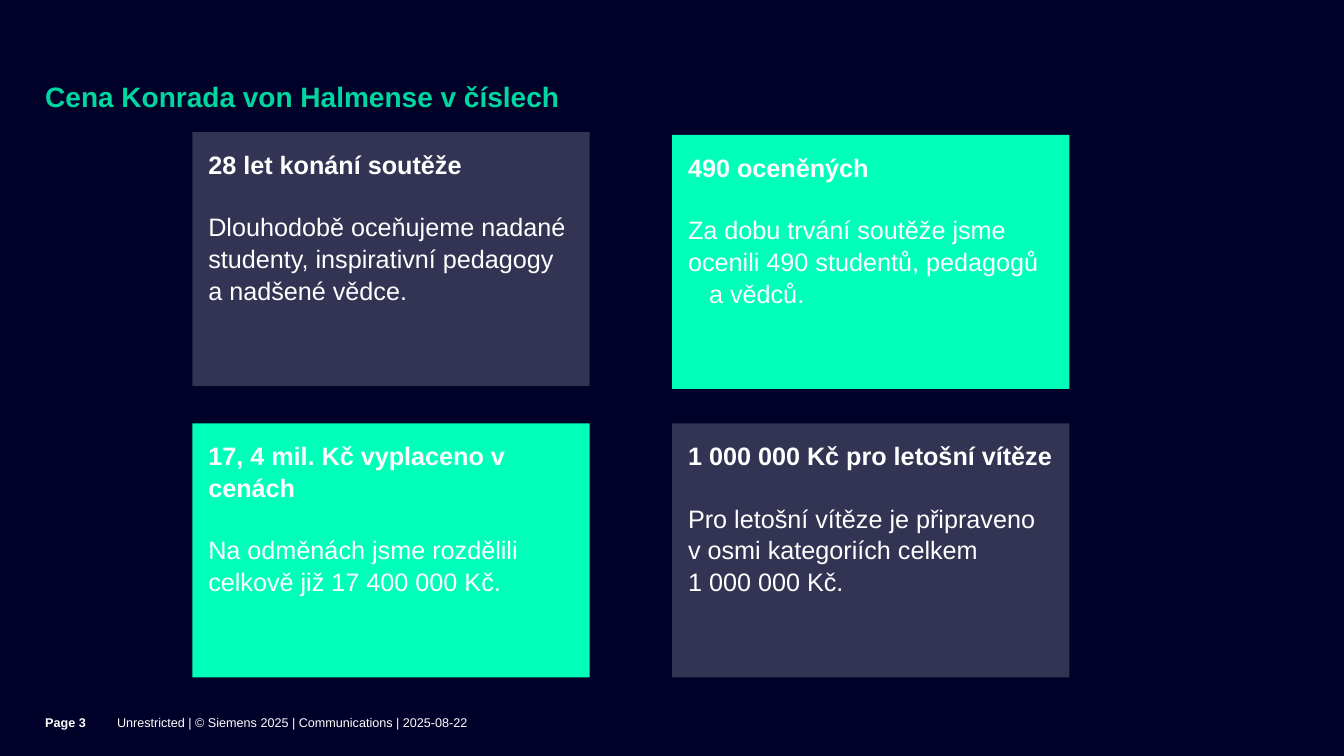
from pptx import Presentation
from pptx.dml.color import RGBColor
from pptx.enum.shapes import MSO_SHAPE as Shape
from pptx.enum.text import MSO_ANCHOR as Anchor, PP_ALIGN as Align
from pptx.util import Cm, Pt

COLORS = {
    "night": "000028",
    "slate": "333353",
    "mint": "00FFB9",
    "teal": "00D7A0",
    "white": "FFFFFF",
}
FONT = "Arial"

TITLE = "Cena Konrada von Halmense v číslech"
CARDS = [
    {"column": 0, "top": 3.33, "fill": "slate",
     "heading": "28 let konání soutěže",
     "body": ["Dlouhodobě oceňujeme nadané studenty, inspirativní pedagogy a nadšené vědce."]},
    {"column": 1, "top": 3.4, "fill": "mint",
     "heading": "490 oceněných",
     "body": ["Za dobu trvání soutěže jsme ocenili 490 studentů, pedagogů", "a vědců."]},
    {"column": 0, "top": 10.67, "fill": "mint",
     "heading": "17, 4 mil. Kč vyplaceno v cenách",
     "body": ["Na odměnách jsme rozdělili celkově již 17 400 000 Kč."]},
    {"column": 1, "top": 10.67, "fill": "slate",
     "heading": "1 000 000 Kč pro letošní vítěze",
     "body": ["Pro letošní vítěze je připraveno v osmi kategoriích celkem\v1 000 000 Kč."]},
]
FOOTER = [
    {"text": "Page 3", "left": 1.14, "width": 1.81, "bold": True},
    {"text": "Unrestricted | © Siemens 2025 | Communications | 2025-08-22",
     "left": 2.95, "width": 25.6, "bold": False},
]

CARD_LEFT, CARD_PITCH = 4.85, 12.09
CARD_WIDTH, CARD_HEIGHT, CARD_INSET = 10.01, 6.4, 0.4
CONTINUATION_INDENT = 0.53
CARD_LINE = 1.05
BODY_GAP = 21.7


def rgb(name):
    return RGBColor.from_string(COLORS[name])


def set_frame(frame, anchor, insets):
    frame.word_wrap = True
    frame.vertical_anchor = anchor
    (frame.margin_left, frame.margin_top,
     frame.margin_right, frame.margin_bottom) = map(Cm, insets)


def write(paragraph, text, size, color, bold):
    paragraph.text = text
    paragraph.alignment = Align.LEFT
    font = paragraph.font
    font.name, font.size, font.bold = FONT, Pt(size), bold
    font.color.rgb = rgb(color)


def add_label(slide, area, text, size, color, bold, anchor, insets):
    frame = slide.shapes.add_textbox(*map(Cm, area)).text_frame
    set_frame(frame, anchor, insets)
    write(frame.paragraphs[0], text, size, color, bold)
    return frame.paragraphs[0]


def add_card(slide, card):
    left = CARD_LEFT + card["column"] * CARD_PITCH
    area = (left, card["top"], CARD_WIDTH, CARD_HEIGHT)
    panel = slide.shapes.add_shape(Shape.RECTANGLE, *map(Cm, area))
    panel.shadow.inherit = False
    panel.fill.solid()
    panel.fill.fore_color.rgb = rgb(card["fill"])
    panel.line.fill.background()
    frame = panel.text_frame
    set_frame(frame, Anchor.TOP, [CARD_INSET] * 4)
    heading = frame.paragraphs[0]
    write(heading, card["heading"], 18, "white", True)
    heading.line_spacing = CARD_LINE
    for index, text in enumerate(card["body"]):
        body = frame.add_paragraph()
        write(body, text, 18, "white", False)
        body.line_spacing = CARD_LINE
        body.space_before = Pt(0 if index else BODY_GAP)
        if index:
            body._p.get_or_add_pPr().set("marL", str(Cm(CONTINUATION_INDENT)))


def main():
    deck = Presentation()
    deck.slide_width, deck.slide_height = Cm(33.87), Cm(19.05)
    slide = deck.slides.add_slide(deck.slide_layouts[6])
    slide.background.fill.solid()
    slide.background.fill.fore_color.rgb = rgb("night")

    title = add_label(slide, (1.14, 1.32, 27.41, 1.6), TITLE, 20, "teal", True,
                      Anchor.BOTTOM, (0, 0, 0.89, 0.05))
    title.line_spacing = 0.9
    for card in CARDS:
        add_card(slide, card)
    for item in FOOTER:
        add_label(slide, (item["left"], 17.53, item["width"], 1.52), item["text"],
                  9, "white", item["bold"], Anchor.MIDDLE, (0, 0, 0, 0.18))
    deck.save("out.pptx")


if __name__ == "__main__":
    main()
